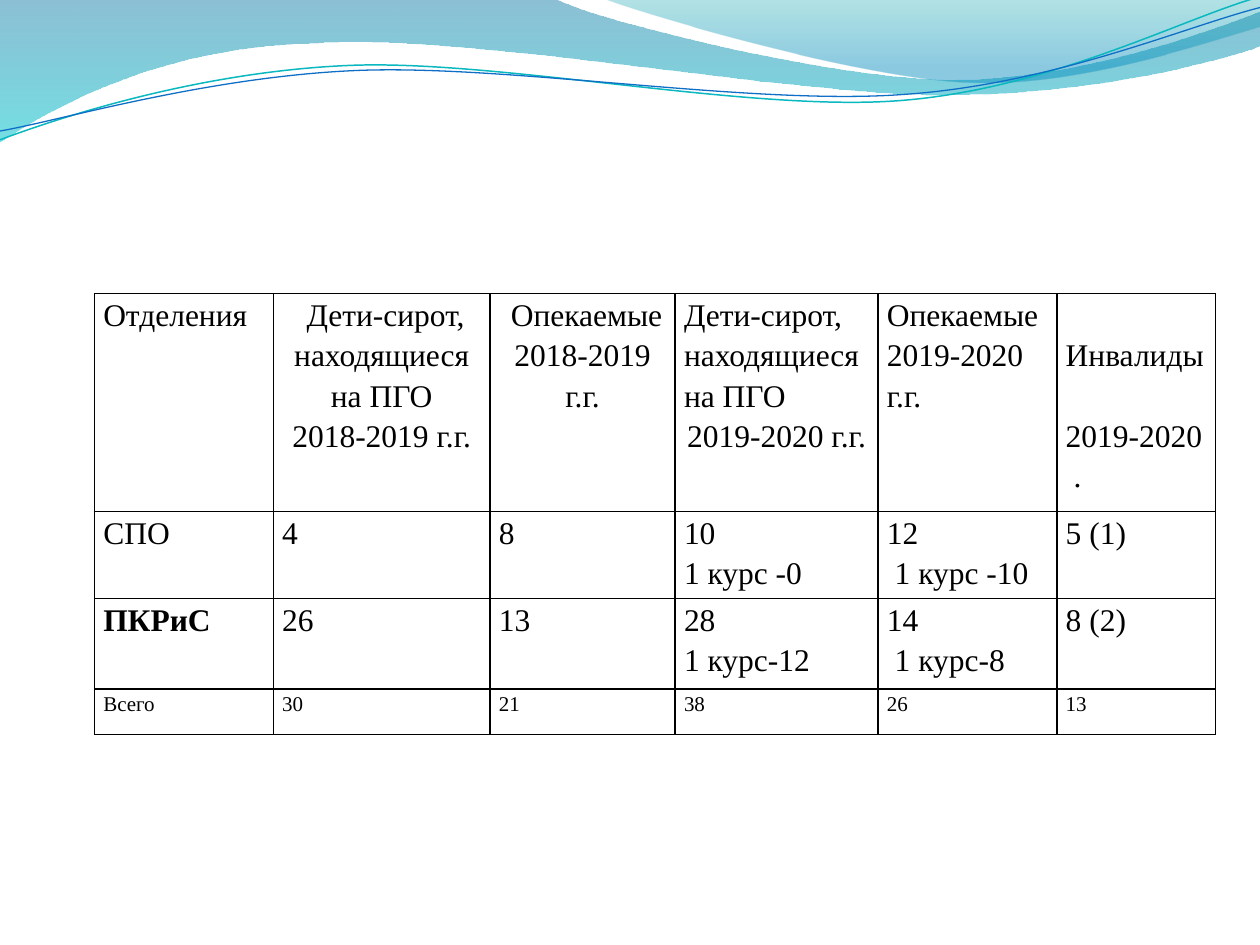
import pptx
import pptx.util
import pptx.dml.color
import pptx.enum.text
import pptx.oxml
import pptx.oxml.ns

COLORS = {
    "ink": "000000",
    "deep blue": "0074A1",
    "cyan": "00C6CF",
    "teal": "00A1A9",
    "sky": "008BBF",
    "teal line": "0AB8BF",
    "blue line": "0F6FC6",
}
NS = pptx.oxml.ns.nsdecls("a")
FONT = "Times New Roman"

deck = pptx.Presentation()
deck.slide_width = pptx.util.Inches(10)
deck.slide_height = pptx.util.Inches(7.5)
unit = deck.slide_width // 10
slide = deck.slides.add_slide(deck.slide_layouts[6])


def add_wave(start, segments, closed):
    anchors = [(round(s[-2] * unit), round(s[-1] * unit)) for s in [start, *segments]]
    builder = slide.shapes.build_freeform(*anchors[0])
    builder.add_line_segments(anchors[1:], close=closed)
    wave = builder.convert_to_shape()
    wave.shadow.inherit = False
    outline = wave.element.spPr.find(".//" + pptx.oxml.ns.qn("a:path"))
    steps = outline.findall(pptx.oxml.ns.qn("a:lnTo"))
    for step, segment in zip(steps, segments):
        if len(segment) == 6:
            points = "".join(
                f'<a:pt x="{round(x * unit) - wave.left}" y="{round(y * unit) - wave.top}"/>'
                for x, y in zip(segment[::2], segment[1::2])
            )
            curve = pptx.oxml.parse_xml(f"<a:cubicBezTo {NS}>{points}</a:cubicBezTo>")
            outline.replace(step, curve)
    return wave


ribbons = [
    ((0, 0), [
        (4.4, -0.01), (4.76, 0.17, 6.64, 0.63, 7.58, 0.63),
        (8.53, 0.63, 9.58, 0.26, 10, 0.09), (10.01, 0.36),
        (9.83, 0.44, 8.7, 0.76, 7.46, 0.75), (6.22, 0.75, 3.82, 0.28, 2.57, 0.34),
        (1.29, 0.36, 0.46, 0.83, -0.01, 1.13),
    ], [(0, "deep blue", 45), (100, "cyan", 55)]),
    ((4.79, -0.01), [
        (5.09, 0.11, 6.82, 0.62, 7.69, 0.65), (8.56, 0.69, 9.61, 0.32, 10, 0.21), (10, 0),
    ], [(0, "teal", 30), (80, "sky", 45)]),
]
for start, segments, stops in ribbons:
    ribbon = add_wave(start, segments, True)
    ribbon.line.fill.background()
    stop_xml = "".join(
        f'<a:gs pos="{place * 1000}"><a:srgbClr val="{COLORS[color]}">'
        f'<a:alpha val="{alpha * 1000}"/></a:srgbClr></a:gs>'
        for place, color, alpha in stops
    )
    gradient = pptx.oxml.parse_xml(
        f'<a:gradFill {NS} rotWithShape="1"><a:gsLst>{stop_xml}</a:gsLst>'
        '<a:lin ang="5400000" scaled="0"/></a:gradFill>'
    )
    ribbon.element.spPr.find(pptx.oxml.ns.qn("a:custGeom")).addnext(gradient)

strands = [
    ((0, 1.11), [
        (0.48, 0.93, 1.58, 0.57, 2.77, 0.52), (3.95, 0.47, 5.93, 0.89, 7.13, 0.8),
        (8.33, 0.71, 9.38, 0.15, 9.98, -0.02),
    ], "teal line", 0.85),
    ((0, 1.04), [
        (0.47, 0.96, 1.64, 0.61, 2.83, 0.56), (4.03, 0.51, 5.97, 0.84, 7.17, 0.75),
        (8.36, 0.67, 9.41, 0.21, 10, 0.06),
    ], "blue line", 0.75),
]
for start, segments, color, weight in strands:
    strand = add_wave(start, segments, False)
    strand.fill.background()
    strand.line.color.rgb = pptx.dml.color.RGBColor.from_string(COLORS[color])
    strand.line.width = pptx.util.Pt(weight)

columns = [1.42, 1.72, 1.47, 1.61, 1.42, 1.26]
rows = [1.73, 0.69, 0.72, 0.36]
departments = [
    [["Отделения"], [" Дети-сирот, находящиеся на ПГО", "2018-2019 г.г."],
     [" Опекаемые", "2018-2019 г.г."], ["Дети-сирот, находящиеся на ПГО", "2019-2020 г.г."],
     ["Опекаемые", "2019-2020 г.г."], [" Инвалиды", "2019-2020  ."]],
    [["СПО"], ["4"], ["8"], ["10 ", "1 курс -0"], ["12 ", " 1 курс -10"], ["5 (1)"]],
    [["ПКРиС"], ["26"], ["13"], ["28 ", "1 курс-12"], ["14", " 1 курс-8"], ["8 (2)"]],
    [["Всего"], ["30"], ["21"], ["38"], ["26"], ["13"]],
]
centred = {(0, 1, 0), (0, 1, 1), (0, 2, 0), (0, 2, 1), (0, 3, 1)}
align = pptx.enum.text.PP_ALIGN

table = slide.shapes.add_table(
    len(rows), len(columns), int(0.75 * unit), int(2.33 * unit),
    int(sum(columns) * unit), int(sum(rows) * unit),
).table
table.first_row = False
table.horz_banding = False
for column, width in zip(table.columns, columns):
    column.width = int(width * unit)
for row, height in zip(table.rows, rows):
    row.height = int(height * unit)

for r, department in enumerate(departments):
    for c, lines in enumerate(department):
        cell = table.cell(r, c)
        cell.margin_left = cell.margin_right = int(0.07 * unit)
        cell.margin_top = cell.margin_bottom = 0
        borders = cell._tc.get_or_add_tcPr()
        for side in ("lnL", "lnR", "lnT", "lnB"):
            borders.append(pptx.oxml.parse_xml(
                f'<a:{side} {NS} w="12700"><a:solidFill>'
                f'<a:srgbClr val="{COLORS["ink"]}"/></a:solidFill></a:{side}>'
            ))
        cell.fill.background()
        for p, line in enumerate(lines):
            frame = cell.text_frame
            paragraph = frame.paragraphs[0] if p == 0 else frame.add_paragraph()
            paragraph.alignment = align.CENTER if (r, c, p) in centred else align.JUSTIFY
            paragraph.line_spacing = 1.15
            if (r, c, p) == (0, 5, 1):
                paragraph.space_before = pptx.util.Pt(23)
            run = paragraph.add_run()
            run.text = line
            run.font.name = FONT
            run.font.size = pptx.util.Pt(12 if r == 3 else 18)
            run.font.bold = (r, c) == (2, 0)
            run.font.color.rgb = pptx.dml.color.RGBColor.from_string(COLORS["ink"])

deck.save("out.pptx")
